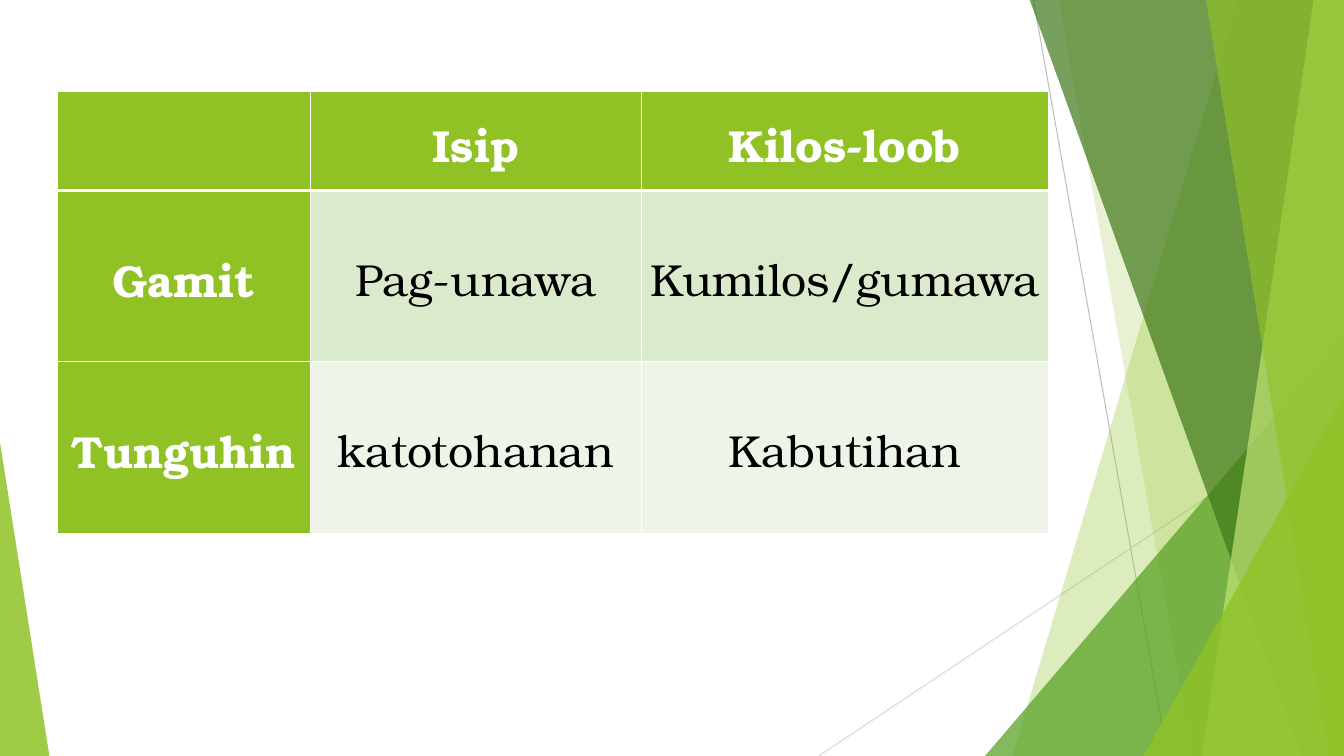
from lxml.etree import SubElement
from pptx import Presentation
from pptx.dml.color import RGBColor
from pptx.enum.shapes import MSO_CONNECTOR as Connector, MSO_SHAPE as Shape
from pptx.enum.text import MSO_ANCHOR as Anchor, PP_ALIGN as Align
from pptx.oxml.ns import qn
from pptx.util import Inches, Pt

WIDTH, HEIGHT = 13.33, 7.5
FONT = "TeX Gyre Bonum"
COLORS = {
    "lime": "90C226",
    "leaf": "54A021",
    "forest": "3F7819",
    "pale lime": "C0E474",
    "gray": "BFBFBF",
    "light gray": "D9D9D9",
    "band dark": "DBE9CD",
    "band light": "EEF4E8",
    "white": "FFFFFF",
    "black": "000000",
}
BANDS = [
    (12.28, 10.04, "lime", 30),
    (10.5, 11.83, "lime", 20),
    (10.21, 12.91, "forest", 70),
    (13.03, 11.92, "pale lime", 70),
    (11.96, 13.18, "lime", 65),
]
ROWS = [
    ["", "Isip", "Kilos-loob"],
    ["Gamit", "Pag-unawa", "Kumilos/gumawa"],
    ["Tunguhin", "katotohanan", "Kabutihan"],
]
COLUMN_WIDTHS = [2.51, 3.28, 4.04]
ROW_HEIGHTS = [0.98, 1.7, 1.7]


def rgb(name):
    return RGBColor.from_string(COLORS[name])


class SlideBuilder:
    def __init__(self, slide):
        self.slide = slide

    def paint(self, shape, color, opacity):
        shape.shadow.inherit = False
        shape.fill.solid()
        shape.fill.fore_color.rgb = rgb(color)
        shape.line.fill.background()
        color_element = shape._element.spPr.find(".//" + qn("a:srgbClr"))
        SubElement(color_element, qn("a:alpha"), val=str(opacity * 1000))

    def line(self, start, end, color):
        points = [Inches(value) for value in (*start, *end)]
        connector = self.slide.shapes.add_connector(Connector.STRAIGHT, *points)
        connector.line.color.rgb = rgb(color)
        connector.line.width = Pt(0.75)
        SubElement(connector._element.spPr, qn("a:effectLst"))

    def band(self, top_x, bottom_x, color, opacity):
        top = Inches(-0.01)
        right, bottom = Inches(WIDTH), Inches(HEIGHT)
        builder = self.slide.shapes.build_freeform(Inches(top_x), top)
        builder.add_line_segments(
            [(right, top), (right, bottom), (Inches(bottom_x), bottom)], close=True
        )
        self.paint(builder.convert_to_shape(), color, opacity)

    def triangle(self, left, top, width, peak, color, opacity):
        box = [Inches(value) for value in (left, top, width, HEIGHT - top)]
        shape = self.slide.shapes.add_shape(Shape.ISOSCELES_TRIANGLE, *box)
        shape.adjustments[0] = peak
        self.paint(shape, color, opacity)

    def borders(self, cell, row):
        properties = cell._tc.get_or_add_tcPr()
        widths = {"lnL": 1, "lnR": 1, "lnT": 3 if row == 1 else 1, "lnB": 3 if row == 0 else 1}
        for tag, width in widths.items():
            border = SubElement(properties, qn("a:" + tag), w=str(Pt(width)))
            fill = SubElement(border, qn("a:solidFill"))
            SubElement(fill, qn("a:srgbClr"), val=COLORS["white"])

    def cell(self, cell, text, row, column):
        is_header = row == 0 or column == 0
        self.borders(cell, row)
        cell.fill.solid()
        cell.fill.fore_color.rgb = rgb("lime" if is_header else ("band dark", "band light")[row - 1])
        cell.vertical_anchor = Anchor.MIDDLE
        cell.margin_left = cell.margin_right = Inches(0.07)
        cell.margin_top = cell.margin_bottom = 0
        cell.text_frame.text = text
        paragraph = cell.text_frame.paragraphs[0]
        paragraph.alignment = Align.CENTER
        paragraph.line_spacing = 1.07
        for run in paragraph.runs:
            run.font.name = FONT
            run.font.size = Pt(32)
            run.font.bold = is_header
            run.font.color.rgb = rgb("white" if is_header else "black")

    def table(self, left, top, rows, widths, heights):
        box = [Inches(value) for value in (left, top, sum(widths), sum(heights))]
        table = self.slide.shapes.add_table(len(rows), len(widths), *box).table
        for column, width in zip(table.columns, widths):
            column.width = Inches(width)
        for row, height in zip(table.rows, heights):
            row.height = Inches(height)
        for row_index, texts in enumerate(rows):
            for column_index, text in enumerate(texts):
                self.cell(table.cell(row_index, column_index), text, row_index, column_index)


def main():
    presentation = Presentation()
    presentation.slide_width = Inches(WIDTH)
    presentation.slide_height = Inches(HEIGHT)
    builder = SlideBuilder(presentation.slides.add_slide(presentation.slide_layouts[6]))

    builder.line((10.25, 0), (11.58, HEIGHT), "gray")
    builder.line((WIDTH, 4.03), (8.12, HEIGHT), "light gray")
    for band in BANDS[:2]:
        builder.band(*band)
    builder.triangle(9.77, 3.33, 3.56, 1, "leaf", 72)
    for band in BANDS[2:]:
        builder.band(*band)
    builder.triangle(11.34, 3.93, 1.99, 1, "lime", 80)
    builder.triangle(0, 4.39, 0.49, 0, "lime", 85)
    builder.table(0.57, 0.91, ROWS, COLUMN_WIDTHS, ROW_HEIGHTS)

    presentation.save("out.pptx")


if __name__ == "__main__":
    main()
